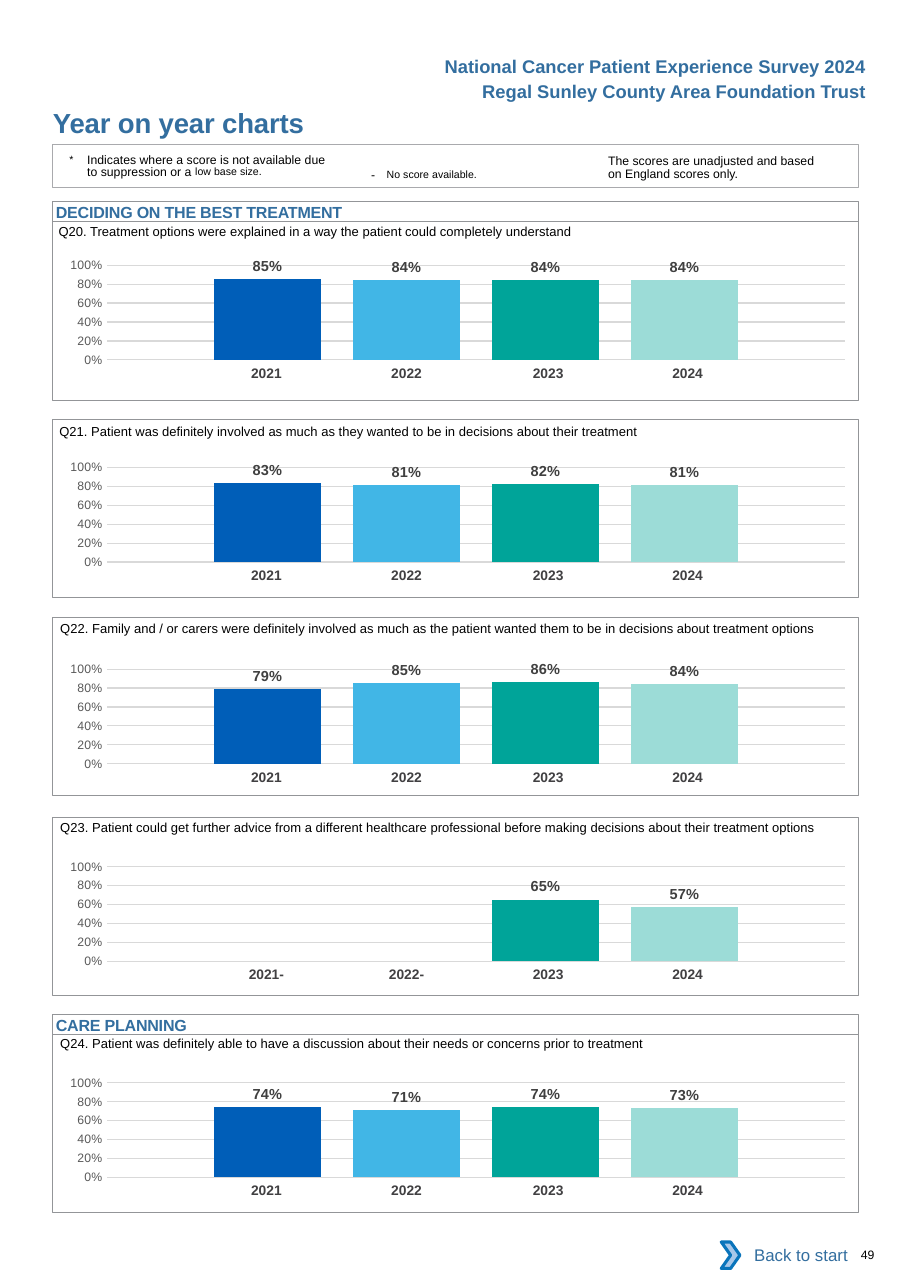
import pptx
import pptx.chart.data
import pptx.dml.color
import pptx.enum.chart
import pptx.enum.shapes
import pptx.enum.text
import pptx.oxml
import pptx.util

Cm, Pt = pptx.util.Cm, pptx.util.Pt
BLUE, BLACK, GREY = "336E9F", "000000", "939598"
LEFT, WIDTH, BOX_HEIGHT = 1.21, 18.59, 4.11
YEARS = {"2021": "005EB8", "2022": "41B6E6", "2023": "00A499", "2024": "9CDCD7"}
ALIGN = pptx.enum.text.PP_ALIGN
RAISED = {"sz": "1200", "baseline": "3000"}


def rgb(value):
    return pptx.dml.color.RGBColor.from_string(value)


def add_text(box, runs, size, color=BLACK, bold=False, align=ALIGN.LEFT, margins=(0, 0, 0, 0), **paragraph):
    """Add a text box; runs are (text, rPr attributes), and "\\n" breaks the line."""
    s = slide.shapes.add_textbox(*map(Cm, box))
    tf = s.text_frame
    tf.word_wrap = True
    for side, margin in zip(("left", "top", "right", "bottom"), margins):
        setattr(tf, f"margin_{side}", Cm(margin))
    p = tf.paragraphs[0]
    for name, value in {"alignment": align, **paragraph}.items():
        setattr(p, name, value)
    for text, attributes in runs:
        if text == "\n":
            p.add_line_break()
            continue
        r = p.add_run()
        r.text = text
        for name, value in {"name": "Arial", "size": Pt(size), "bold": bold}.items():
            setattr(r.font, name, value)
        r.font.color.rgb = rgb(color)
        for name, value in attributes.items():
            r.font._element.set(name, value)
    return s


prs = pptx.Presentation()
prs.slide_width, prs.slide_height = Cm(20.98), Cm(29.69)
slide = prs.slides.add_slide(prs.slide_layouts[6])

# Page header
for top, line in (
    (1.15, "National Cancer Patient Experience Survey 2024"),
    (1.73, "Regal Sunley County Area Foundation Trust"),
):
    add_text((9.7, top, 10.52, 0.76), [(line, {})], 12, BLUE, True, ALIGN.RIGHT, (0.25, 0.13, 0.25, 0.13))
add_text((1.2, 2.44, 11.43, 0.76), [("Year on year charts", {"spc": "-10"})], 18, BLUE, True,
         margins=(0.02, 0, 0, 0))

# Key to the symbols
note = add_text(
    (1.6, 3.51, 6.91, 0.7),
    [("*\t", RAISED), ("Indicates where a score is not available due", {}), ("\n", {}),
     ("to suppression or a ", {}), ("low base size.", {"sz": "1200", "baseline": "7000"})],
    8, margins=(0, 0.08, 0, 0), line_spacing=Pt(8.1))
for name, value in {"marL": Cm(0.41), "indent": Cm(-0.41)}.items():
    note.text_frame.paragraphs[0]._p.get_or_add_pPr().set(name, str(value))
add_text(
    (8.31, 3.58, 4.65, 0.61),
    [("- ", {"spc": "260"}), ("No score available.", RAISED)],
    8, margins=(0.25, 0.13, 0.25, 0.13))
add_text(
    (14.02, 3.51, 5.11, 0.69),
    [("The scores are unadjusted and based", {}), ("\n", {}), ("on England scores only.", {})],
    8, margins=(0, 0.08, 0, 0), line_spacing=Pt(8.1))

# Question, its left and top, top of the frame, top of the chart, score per year
questions = [
    ("Q20. Treatment options were explained in a way the patient could completely understand",
     1.33, 4.93, 5.11, 5.64, (0.85, 0.84, 0.84, 0.84)),
    ("Q21. Patient was definitely involved as much as they wanted to be in decisions about their treatment",
     1.35, 9.53, 9.67, 10.3, (0.83, 0.81, 0.82, 0.81)),
    ("Q22. Family and / or carers were definitely involved as much as the patient wanted them to be "
     "in decisions about treatment options",
     1.37, 14.07, 14.23, 14.95, (0.79, 0.85, 0.86, 0.84)),
    ("Q23. Patient could get further advice from a different healthcare professional before making "
     "decisions about their treatment options",
     1.37, 18.67, 18.84, 19.5, (None, None, 0.65, 0.57)),
    ("Q24. Patient was definitely able to have a discussion about their needs or concerns prior to treatment",
     1.37, 23.65, 23.85, 24.48, (0.74, 0.71, 0.74, 0.73)),
]
frames = [(3.33, 0.99, "A9AAAD", 0.75)]

for question, text_left, text_top, frame_top, chart_top, scores in questions:
    # Year labels under the bars
    table = slide.shapes.add_table(1, 4, Cm(4.4), Cm(chart_top + 2.67), Cm(13.09), Cm(0.69)).table
    table.first_row = table.horz_banding = False
    table._tbl.tblPr[0].text = "{2D5ABB26-0587-4C30-8999-92F81FD0307C}"
    columns = zip(table.columns, table.rows[0].cells, YEARS, scores, (3.23, 3.23, 3.4, 3.23), (0, 0, 0.1, 0.3))
    for column, cell, year, score, width, margin in columns:
        column.width = Cm(width)
        cell.fill.background()
        cell.margin_right = Cm(margin)
        p = cell.text_frame.paragraphs[0]
        p.alignment = ALIGN.CENTER
        r = p.add_run()
        r.text = year if score is not None else f"{year}-"
        for name, value in {"name": "Arial", "size": Pt(9), "bold": True}.items():
            setattr(r.font, name, value)
        r.font.color.rgb = rgb("414042")

    data = pptx.chart.data.CategoryChartData(number_format="0%")
    data.categories = ["1"]
    for year, score in zip(YEARS, scores):
        data.add_series(year, [score])
    chart = slide.shapes.add_chart(
        pptx.enum.chart.XL_CHART_TYPE.COLUMN_CLUSTERED,
        Cm(1), Cm(chart_top), Cm(WIDTH), Cm(3.28), data).chart
    chart.has_legend = chart.has_title = False
    chart.font.name, chart.font.size = "Calibri", Pt(10)
    chart.font.color.rgb = rgb(BLACK)
    chart.category_axis.visible = False
    axis = chart.value_axis
    for name, value in {
        "minimum_scale": 0, "maximum_scale": 1, "major_unit": 0.2,
        "major_tick_mark": pptx.enum.chart.XL_TICK_MARK.NONE,
    }.items():
        setattr(axis, name, value)
    axis.format.line.fill.background()
    axis.major_gridlines.format.line.color.rgb = rgb("D9D9D9")
    axis.major_gridlines.format.line.width = Pt(0.75)
    axis.tick_labels.number_format, axis.tick_labels.number_format_is_linked = "0%", False
    axis.tick_labels.font.name, axis.tick_labels.font.size = "Arial", Pt(8)
    axis.tick_labels.font.color.rgb = rgb("595959")

    plot = chart.plots[0]
    plot.gap_width, plot.overlap, plot.vary_by_categories = 200, -30, False
    for series, color in zip(plot.series, YEARS.values()):
        series.format.fill.solid()
        series.format.fill.fore_color.rgb = rgb(color)
        labels = series.data_labels
        for name, value in {
            "show_value": True, "number_format": "0%", "number_format_is_linked": False,
            "position": pptx.enum.chart.XL_LABEL_POSITION.OUTSIDE_END,
        }.items():
            setattr(labels, name, value)
        for name, value in {"name": "Arial", "size": Pt(9.5), "bold": True}.items():
            setattr(labels.font, name, value)
        labels.font.color.rgb = rgb("404040")

    area = chart._chartSpace.chart.plotArea
    for old in area.xpath("c:layout"):
        area.remove(old)
    place = {"layoutTarget": "inner", "xMode": "edge", "yMode": "edge",
             "x": 0.079, "y": 0.145, "w": 0.915, "h": 0.666}
    area.insert(0, pptx.oxml.parse_xml(
        '<c:layout xmlns:c="http://schemas.openxmlformats.org/drawingml/2006/chart"><c:manualLayout>'
        + "".join(f'<c:{name} val="{value}"/>' for name, value in place.items())
        + "</c:manualLayout></c:layout>"))

    add_text((text_left, text_top, 18.4, 0.61), [(question, {})], 8.5, margins=(0.02, 0.23, 0, 0))
    frames.append((frame_top, BOX_HEIGHT, GREY, 0.5))

# Frames and section headings
for top, height, color, weight in frames:
    s = slide.shapes.add_shape(
        pptx.enum.shapes.MSO_SHAPE.RECTANGLE, Cm(LEFT), Cm(top), Cm(WIDTH), Cm(height))
    s.shadow.inherit = False
    s.fill.background()
    s.line.color.rgb, s.line.width = rgb(color), Pt(weight)
for top, heading in ((4.65, "DECIDING ON THE BEST TREATMENT"), (23.39, "CARE PLANNING")):
    s = add_text((LEFT, top, WIDTH, 0.46), [(heading, {"spc": "-10"})], 10.5, BLUE, True,
                 margins=(0.08, 0.01, 0, 0))
    s.line.color.rgb, s.line.width = rgb(GREY), Pt(0.5)

# Page footer
s = add_text((16.8, 28.4, 3, 1.07), [("Back to start", {})], 11, BLUE, align=ALIGN.RIGHT,
             margins=(0.25, 0.13, 0.25, 0.13))
s.text_frame.vertical_anchor = pptx.enum.text.MSO_ANCHOR.MIDDLE
chevron = slide.shapes.add_shape(
    pptx.enum.shapes.MSO_SHAPE.CHEVRON, Cm(16.63), Cm(28.63), Cm(0.43), Cm(0.61))
chevron.shadow.inherit = False
chevron.fill.solid()
chevron.fill.fore_color.rgb = rgb("A8C7E9")
chevron.line.color.rgb, chevron.line.width = rgb("0A74BB"), Pt(2)
add_text((19.6, 28.76, 1.3, 0.33), [("49", {})], 8, margins=(0.25, 0, 0, 0))

prs.save("out.pptx")
